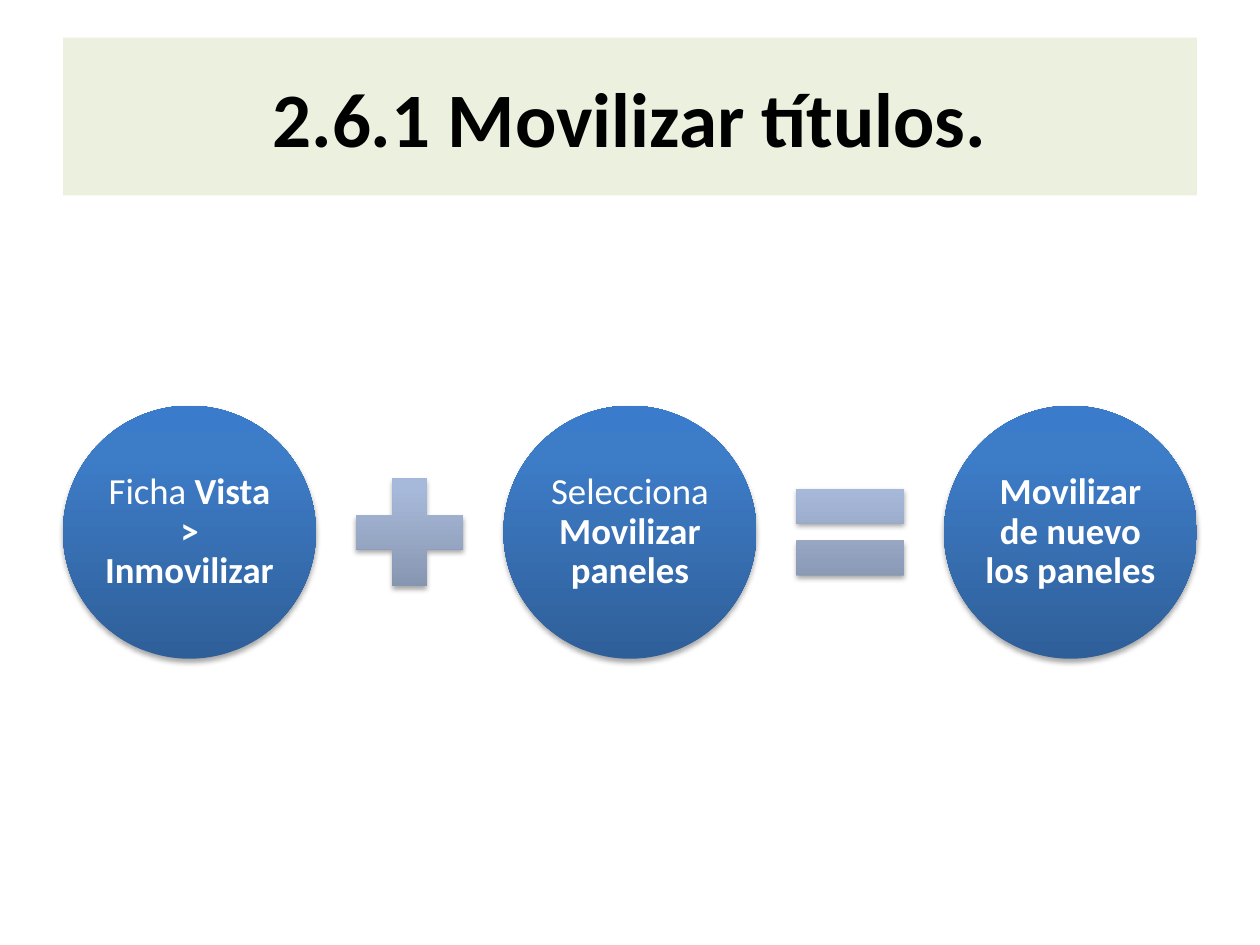
from copy import deepcopy

from lxml.etree import SubElement
from pptx import Presentation
from pptx.dml.color import RGBColor
from pptx.enum.shapes import MSO_SHAPE as Shape
from pptx.enum.text import MSO_ANCHOR as Anchor, PP_ALIGN as Align
from pptx.oxml.ns import qn
from pptx.util import Cm, Pt

BLACK = RGBColor(0x00, 0x00, 0x00)
WHITE = RGBColor(0xFF, 0xFF, 0xFF)
PALE_GREEN = RGBColor(0xEB, 0xF1, 0xDE)
BLUES = [RGBColor(0x2F, 0x5F, 0x99), RGBColor(0x3D, 0x7C, 0xC7), RGBColor(0x3A, 0x7C, 0xCB)]
GREYS = [RGBColor(0x81, 0x8F, 0xA8), RGBColor(0xA7, 0xB9, 0xDA), RGBColor(0xA7, 0xBA, 0xDC)]
STOP_POSITIONS = [0, 0.8, 1]
FONT = "Calibri"

LEFT, CENTRE_Y, STEP = 1.27, 10.73, 8.88
CIRCLE, SIGN = 5.1, 2.95


def add_shaded_shape(page, kind, centre_x, size, colours):
    """Add a borderless square-framed shape with a vertical gradient and a soft shadow."""
    shape = page.shapes.add_shape(
        kind, Cm(centre_x - size / 2), Cm(CENTRE_Y - size / 2), Cm(size), Cm(size))
    shape.line.fill.background()
    shape.fill.gradient()
    shape.fill.gradient_angle = 90
    stop_list = shape.element.spPr.find(".//" + qn("a:gsLst"))
    stop_list.append(deepcopy(stop_list[-1]))
    for stop, position, colour in zip(shape.fill.gradient_stops, STOP_POSITIONS, colours):
        stop.position = position
        stop.color.rgb = colour

    shape.shadow.inherit = False
    effects = shape.element.spPr.find(qn("a:effectLst"))
    shadow = SubElement(effects, qn("a:outerShdw"), blurRad=str(Pt(3.1)), dist=str(Pt(1.8)),
                        dir="5400000", rotWithShape="0")
    shade = SubElement(shadow, qn("a:srgbClr"), val="000000")
    SubElement(shade, qn("a:alpha"), val="35000")
    return shape


deck = Presentation()
deck.slide_width, deck.slide_height = Cm(25.4), Cm(19.05)
page = deck.slides.add_slide(deck.slide_layouts[5])

title = page.shapes.title
title.left, title.top, title.width, title.height = Cm(LEFT), Cm(0.76), Cm(22.86), Cm(3.18)
title.fill.solid()
title.fill.fore_color.rgb = PALE_GREEN
title.text_frame.text = "2.6.1 Movilizar títulos."
title.text_frame.vertical_anchor = Anchor.MIDDLE
para = title.text_frame.paragraphs[0]
para.alignment = Align.CENTER
font = para.runs[0].font
font.name, font.size, font.bold, font.color.rgb = FONT, Pt(44), True, BLACK

# Each step: plain text, bold text, sign that follows
steps = [
    ("Ficha ", "Vista > Inmovilizar", Shape.MATH_PLUS),
    ("Selecciona ", "Movilizar paneles", Shape.MATH_EQUAL),
    ("", "Movilizar de nuevo los paneles", None),
]
for index, (plain, strong, sign) in enumerate(steps):
    centre_x = LEFT + CIRCLE / 2 + index * STEP
    circle = add_shaded_shape(page, Shape.OVAL, centre_x, CIRCLE, BLUES)
    frame = circle.text_frame
    frame.word_wrap = True
    frame.vertical_anchor = Anchor.MIDDLE
    frame.margin_left = frame.margin_right = frame.margin_top = frame.margin_bottom = Cm(0.07)
    para = frame.paragraphs[0]
    para.alignment = Align.CENTER
    para.line_spacing = 0.9
    for text, bold in ((plain, False), (strong, True)):
        if text:
            span = para.add_run()
            span.text = text
            font = span.font
            font.name, font.size, font.bold, font.color.rgb = FONT, Pt(21), bold, WHITE
    if sign is not None:
        add_shaded_shape(page, sign, centre_x + STEP / 2, SIGN, GREYS)

deck.save("out.pptx")
